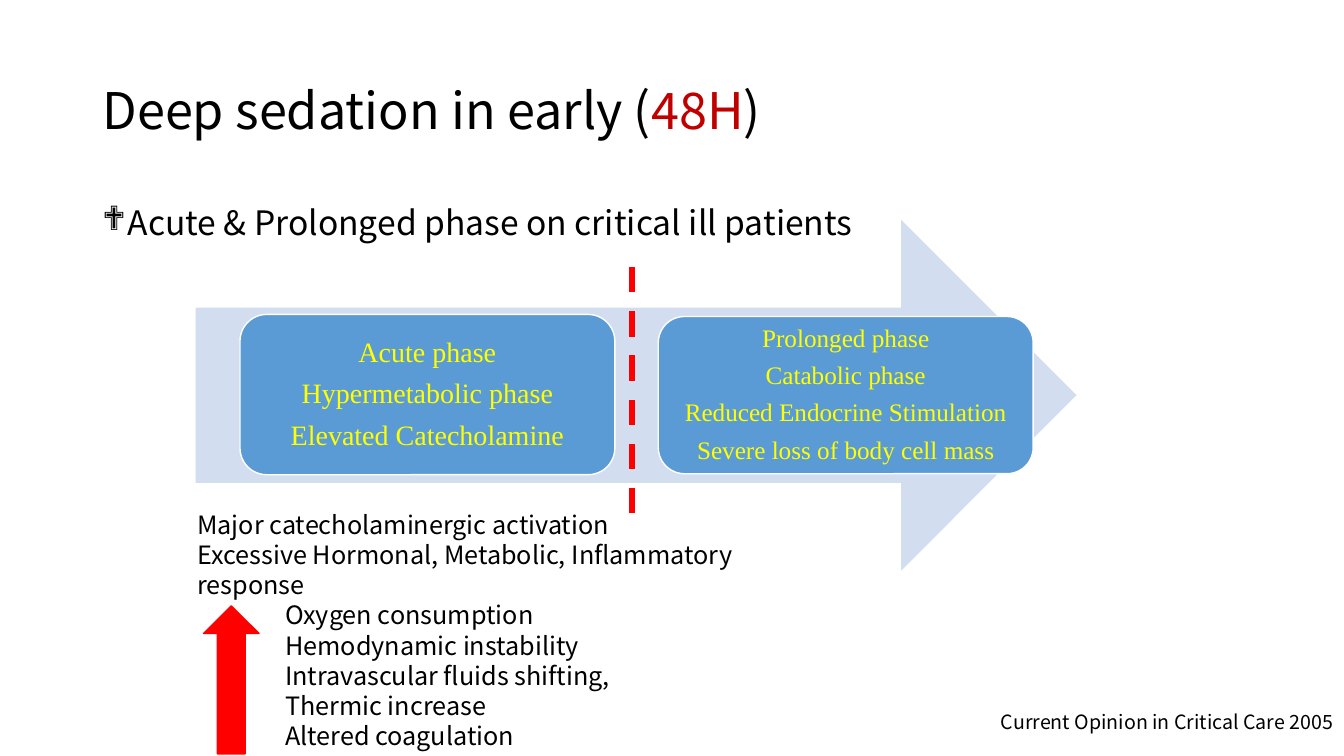
from lxml import etree
from pptx import Presentation
from pptx.dml.color import RGBColor
from pptx.enum.dml import MSO_LINE
from pptx.enum.shapes import MSO_CONNECTOR, MSO_SHAPE
from pptx.enum.text import MSO_ANCHOR, PP_ALIGN
from pptx.oxml.ns import qn
from pptx.util import Pt

BLACK = RGBColor(0x00, 0x00, 0x00)
WHITE = RGBColor(0xFF, 0xFF, 0xFF)
RED = RGBColor(0xFF, 0x00, 0x00)
DARK_RED = RGBColor(0xC0, 0x00, 0x00)
YELLOW = RGBColor(0xFF, 0xFF, 0x00)
BLUE = RGBColor(0x5B, 0x9B, 0xD5)
PALE_BLUE = RGBColor(0xD2, 0xDE, 0xEF)

SANS = "Noto Sans CJK KR"
SERIF = "Times New Roman"
LEFT, CENTER = PP_ALIGN.LEFT, PP_ALIGN.CENTER
MIDDLE = MSO_ANCHOR.MIDDLE
RIGHT_ARROW, UP_ARROW = MSO_SHAPE.RIGHT_ARROW, MSO_SHAPE.UP_ARROW
ROUNDED = MSO_SHAPE.ROUNDED_RECTANGLE
STRAIGHT, DASH = MSO_CONNECTOR.STRAIGHT, MSO_LINE.DASH


def add_run(paragraph, text, size, color=BLACK, font=SANS):
    run = paragraph.add_run()
    run.text = text
    run.font.name = font
    run.font.size = Pt(size)
    run.font.color.rgb = color


def add_shape(kind, left, top, width, height, fill, line=None):
    shape = slide.shapes.add_shape(kind, Pt(left), Pt(top), Pt(width), Pt(height))
    shape.shadow.inherit = False
    shape.fill.solid()
    shape.fill.fore_color.rgb = fill
    if line is None:
        shape.line.fill.background()
    else:
        shape.line.color.rgb = line
        shape.line.width = Pt(1)
    return shape


presentation = Presentation()
presentation.slide_width = Pt(960)
presentation.slide_height = Pt(540)
slide = presentation.slides.add_slide(presentation.slide_layouts[1])

# Title
title = slide.shapes.title
title.left, title.top, title.width, title.height = Pt(66), Pt(28.8), Pt(828), Pt(104.4)
title.text_frame.vertical_anchor = MIDDLE
paragraph = title.text_frame.paragraphs[0]
paragraph.alignment = LEFT
paragraph.line_spacing = 0.9
for text, color in (("Deep sedation in early (", BLACK), ("48H", DARK_RED), (")", BLACK)):
    add_run(paragraph, text, 36, color)

# Bulleted heading
body = slide.placeholders[1]
body.left, body.top, body.width, body.height = Pt(66), Pt(144), Pt(828), Pt(342.7)
paragraph = body.text_frame.paragraphs[0]
paragraph.line_spacing = 0.9
paragraph.space_before = Pt(0)
properties = paragraph._p.get_or_add_pPr()
properties.set("marL", str(Pt(18)))
properties.set("indent", str(-Pt(18)))
etree.SubElement(properties, qn("a:buFont")).set("typeface", "Wingdings")
etree.SubElement(properties, qn("a:buChar")).set("char", "❖")
add_run(paragraph, "Acute & Prolonged phase on critical ill patients", 24)

# Timeline arrow with the two phases
add_shape(RIGHT_ARROW, 139.7, 157, 629.3, 250.6, PALE_BLUE)
phases = (
    (171.4, 224.6, 114.5, 20,
     ("Acute phase", "Hypermetabolic phase", "Elevated Catecholamine")),
    (470.2, 226.1, 112.3, 18,
     ("Prolonged phase", "Catabolic phase", "Reduced Endocrine Stimulation",
      "Severe loss of body cell mass")),
)
for left, top, height, size, lines in phases:
    phase = add_shape(ROUNDED, left, top, 267.8, height, BLUE, WHITE)
    frame = phase.text_frame
    frame.word_wrap = True
    frame.vertical_anchor = MIDDLE
    frame.margin_left = frame.margin_right = Pt(5.5)
    frame.margin_top = frame.margin_bottom = Pt(5.5)
    for index, text in enumerate(lines):
        paragraph = frame.add_paragraph() if index else frame.paragraphs[0]
        paragraph.alignment = CENTER
        paragraph.line_spacing = 0.9
        paragraph.space_after = Pt(size * 0.4)
        add_run(paragraph, text, size, YELLOW, SERIF)

# Citation and notes on the acute phase
notes = (
    (707.8, 503.3, 253.4, 24.5, 14, False, ("Current Opinion in Critical Care 2005",)),
    (133.9, 360, 465, 72.7, 18, True,
     ("Major catecholaminergic activation",
      "Excessive Hormonal, Metabolic, Inflammatory response")),
    (196.6, 424.8, 360, 116.6, 18, True,
     ("Oxygen consumption", "Hemodynamic instability", "Intravascular fluids shifting,",
      "Thermic increase", "Altered coagulation")),
)
for left, top, width, height, size, wrap, lines in notes:
    box = slide.shapes.add_textbox(Pt(left), Pt(top), Pt(width), Pt(height))
    frame = box.text_frame
    frame.word_wrap = wrap
    for index, text in enumerate(lines):
        paragraph = frame.add_paragraph() if index else frame.paragraphs[0]
        add_run(paragraph, text, size)

# Increase arrow
add_shape(UP_ARROW, 145.4, 432.7, 39.6, 105.8, RED, RED)

# Dashed divider between the phases
divider = slide.shapes.add_connector(STRAIGHT, Pt(451.4), Pt(190.8), Pt(451.4), Pt(366.5))
divider.line.color.rgb = RED
divider.line.width = Pt(4.5)
divider.line.dash_style = DASH
etree.SubElement(divider._element.spPr, qn("a:effectLst"))

presentation.save("out.pptx")
